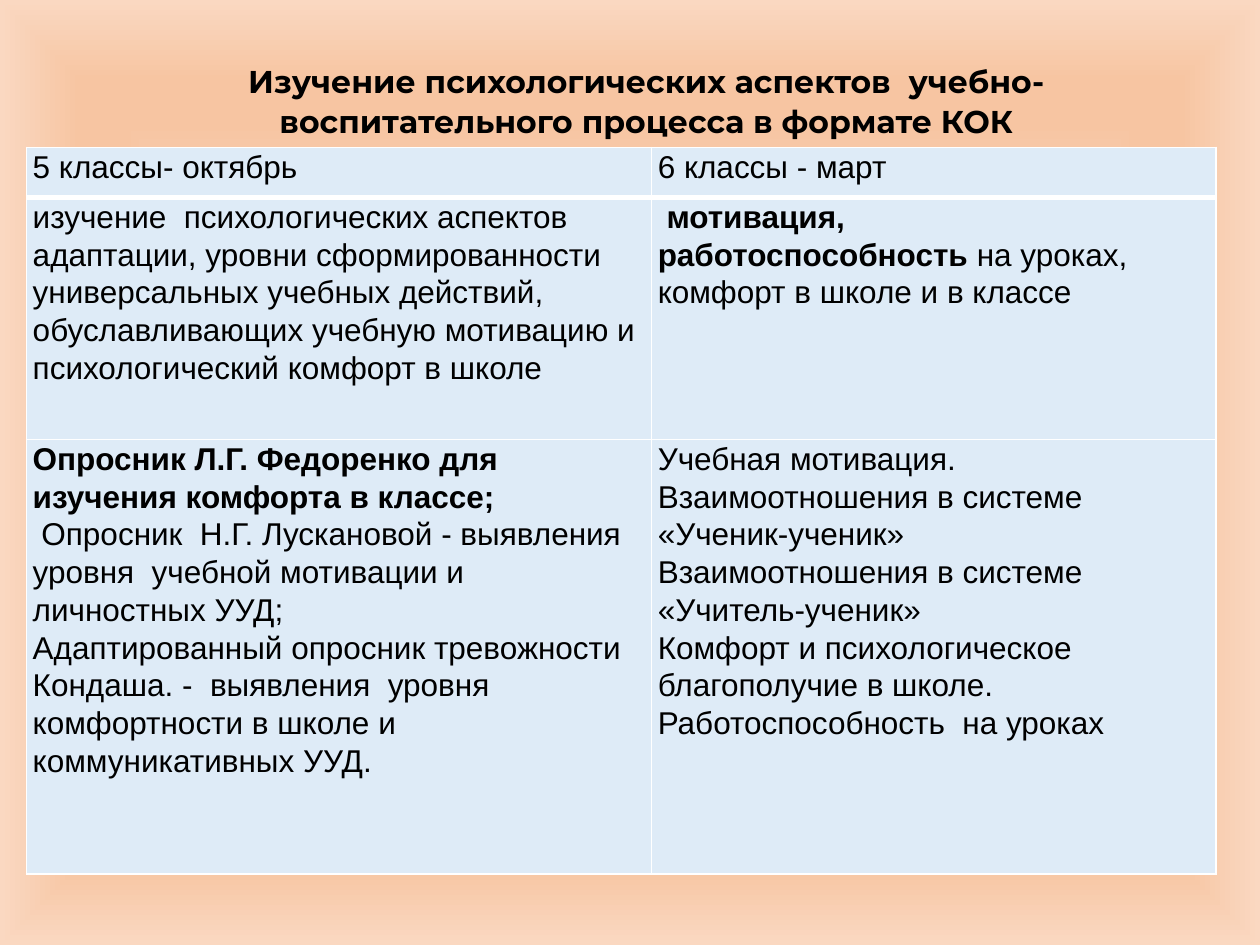
from typing import NamedTuple

from pptx import Presentation
from pptx import oxml
from pptx import util as u
from pptx.dml.color import RGBColor
from pptx.enum import text
from pptx.oxml import ns

WHITE, BLACK, PALE_BLUE = "FFFFFF", "000000", "DEEBF7"
THIN, THICK = 1, 3


class Span(NamedTuple):
    words: str
    bold: bool = False


class Stop(NamedTuple):
    percent: int
    colour: str


Para = list[Span]
CellText = list[Para]

TITLE = Span(
    "Изучение психологических аспектов  учебно-воспитательного процесса в формате КОК",
    bold=True,
)
BACKGROUND = [Stop(0, "FEF8F5"), Stop(74, "F7C5A2"), Stop(83, "F7C5A2"), Stop(100, "FAD8C1")]
COLUMN_WIDTHS = [12.6, 11.38]
ROW_HEIGHTS = [1.01, 4.88, 8.76]
ROWS: list[list[CellText]] = [
    [
        [[Span("5 классы- октябрь")]],
        [[Span("6 классы - март")]],
    ],
    [
        [[Span("изучение  психологических аспектов адаптации, уровни сформированности  "
               "универсальных учебных действий, обуславливающих учебную мотивацию и "
               "психологический комфорт в школе")]],
        [
            [Span(" "), Span("мотивация,", bold=True)],
            [Span("работоспособность ", bold=True),
             Span("на уроках,  комфорт в школе и в классе")],
        ],
    ],
    [
        [
            [Span("Опросник Л.Г. Федоренко для изучения комфорта в классе;", bold=True)],
            [Span(" Опросник  Н.Г. Лускановой - выявления уровня  учебной мотивации "
                  "и личностных УУД;")],
            [Span("Адаптированный опросник тревожности Кондаша. -  выявления  уровня "
                  "комфортности в школе и коммуникативных УУД.")],
        ],
        [
            [Span("Учебная мотивация.")],
            [Span("Взаимоотношения в системе «Ученик-ученик»")],
            [Span("Взаимоотношения в системе «Учитель-ученик»")],
            [Span("Комфорт и психологическое благополучие в школе.")],
            [Span("Работоспособность  на уроках")],
        ],
    ],
]


def rgb(colour: str) -> RGBColor:
    return RGBColor.from_string(colour)


def paint_background(page, stops: list[Stop]) -> None:
    """Fill the page with a gradient that spreads from its centre."""
    page.background.fill.gradient()
    gradient = next(page.element.iter(ns.qn("a:gradFill")))
    marks = "".join(
        f'<a:gs pos="{stop.percent * 1000}"><a:srgbClr val="{stop.colour}"/></a:gs>'
        for stop in stops
    )
    centred = oxml.parse_xml(
        f'<a:gradFill {ns.nsdecls("a")} rotWithShape="1"><a:gsLst>{marks}</a:gsLst>'
        '<a:path path="shape"><a:fillToRect l="50000" t="50000" r="50000" b="50000"/>'
        "</a:path></a:gradFill>"
    )
    gradient.getparent().replace(gradient, centred)


def write(frame, paras: CellText, font: str, align: text.PP_ALIGN) -> None:
    frame.word_wrap = True
    for index, spans in enumerate(paras):
        para = frame.add_paragraph() if index else frame.paragraphs[0]
        para.alignment = align
        para.line_spacing = 1.07
        for span in spans:
            run = para.add_run()
            run.text = span.words
            run.font.name = font
            run.font.size = u.Pt(18)
            run.font.bold = span.bold
            run.font.color.rgb = rgb(BLACK)


def border(cell, side: str, points: int) -> None:
    """Draw one white edge; side is L, R, T or B."""
    cell._tc.get_or_add_tcPr().append(oxml.parse_xml(
        f'<a:ln{side} {ns.nsdecls("a")} w="{u.Pt(points)}">'
        f'<a:solidFill><a:srgbClr val="{WHITE}"/></a:solidFill></a:ln{side}>'
    ))


def add_title(page) -> None:
    box = page.shapes.add_textbox(u.Cm(2.49), u.Cm(1.07), u.Cm(21.08), u.Cm(1.9))
    write(box.text_frame, [[TITLE]], "Montserrat", text.PP_ALIGN.CENTER)


def add_survey_table(page) -> None:
    table = page.shapes.add_table(
        len(ROW_HEIGHTS), len(COLUMN_WIDTHS), u.Cm(0.53), u.Cm(2.97),
        u.Cm(sum(COLUMN_WIDTHS)), u.Cm(sum(ROW_HEIGHTS)),
    ).table
    table.first_row = table.horz_banding = False
    for column, width in zip(table.columns, COLUMN_WIDTHS):
        column.width = u.Cm(width)
    for row_index, (row, height) in enumerate(zip(table.rows, ROW_HEIGHTS)):
        row.height = u.Cm(height)
        for cell, paras in zip(row.cells, ROWS[row_index]):
            cell.margin_left = cell.margin_right = u.Cm(0.13)
            cell.margin_top = cell.margin_bottom = 0
            edges = {
                "L": THIN,
                "R": THIN,
                "T": THICK if row_index == 1 else THIN,
                "B": THICK if row_index == 0 else THIN,
            }
            for side, points in edges.items():
                border(cell, side, points)
            cell.fill.solid()
            cell.fill.fore_color.rgb = rgb(PALE_BLUE)
            write(cell.text_frame, paras, "Arial", text.PP_ALIGN.LEFT)


def main() -> None:
    deck = Presentation()
    deck.slide_width, deck.slide_height = u.Cm(25.4), u.Cm(19.05)
    page = deck.slides.add_slide(deck.slide_layouts[6])
    paint_background(page, BACKGROUND)
    add_title(page)
    add_survey_table(page)
    deck.save("out.pptx")


if __name__ == "__main__":
    main()
